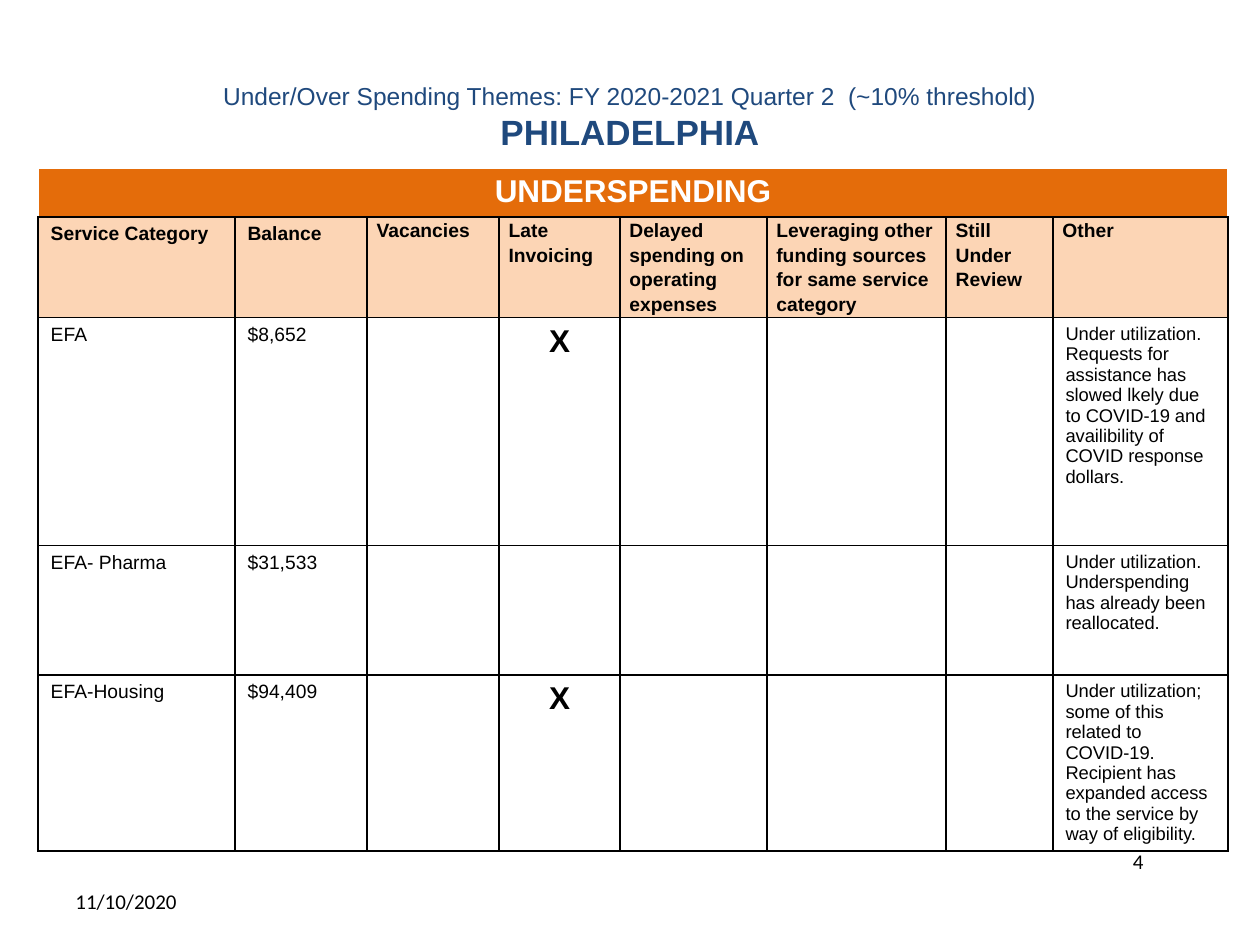
from lxml import etree
from pptx import Presentation
from pptx.dml.color import RGBColor
from pptx.enum.text import MSO_ANCHOR, PP_ALIGN
from pptx.oxml.ns import qn
from pptx.util import Pt

LEFT, CENTER, RIGHT = PP_ALIGN.LEFT, PP_ALIGN.CENTER, PP_ALIGN.RIGHT
MIDDLE = MSO_ANCHOR.MIDDLE

THEME = {
    "navy": "1F497D", "orange": "E46C0A", "peach": "FCD5B5",
    "black": "000000", "white": "FFFFFF",
    "font": "Arial", "footer_font": "Calibri",
    "subtitle": 14, "city": 20, "banner": 18, "mark": 18,
    "body": 11, "reason": 10.5, "footer": 12,
}


def add_run(paragraph, text, size, color="black", bold=False, font="font"):
    run = paragraph.add_run()
    run.text = text
    run.font.name = THEME[font]
    run.font.size = Pt(THEME[size])
    run.font.bold = bold
    run.font.color.rgb = RGBColor.from_string(THEME[color])


def style_cell(cell, fill, edge="black"):
    """Fill a cell and draw its borders; edge colours all sides but the bottom."""
    if fill:
        cell.fill.solid()
        cell.fill.fore_color.rgb = RGBColor.from_string(THEME[fill])
    else:
        cell.fill.background()
    properties = cell._tc.get_or_add_tcPr()
    for index, side in enumerate(("lnL", "lnR", "lnT", "lnB")):
        line = etree.Element(qn("a:" + side), w=str(Pt(1)))
        solid = etree.SubElement(line, qn("a:solidFill"))
        color = "black" if side == "lnB" else edge
        etree.SubElement(solid, qn("a:srgbClr"), val=THEME[color])
        properties.insert(index, line)


prs = Presentation()
prs.slide_width, prs.slide_height = Pt(720), Pt(540)
slide = prs.slides.add_slide(prs.slide_layouts[5])

# Title
title = slide.shapes.title
title.left, title.top, title.width, title.height = Pt(36), Pt(21.6), Pt(648), Pt(90)
title.text_frame.vertical_anchor = MIDDLE
heading = title.text_frame.paragraphs[0]
heading.alignment = CENTER
add_run(heading, "Under/Over Spending Themes: FY 2020-2021 Quarter 2  (~10% threshold)",
        "subtitle", "navy")
heading.add_line_break()
add_run(heading, "PHILADELPHIA", "city", "navy", bold=True)

# Spending table
column_widths = [112.5, 75.5, 75.5, 69, 84, 102.5, 61, 100]
row_heights = [28, 57.5, 130.3, 74, 92]
headers = ["Service Category", "Balance", "Vacancies", "Late Invoicing",
           "Delayed spending on operating expenses",
           "Leveraging other funding sources for same service category",
           "Still Under Review", "Other"]
services = [
    ("EFA", "$8,652", True,
     "Under utilization. Requests for assistance has slowed lkely due to COVID-19 "
     "and availibility of COVID response dollars."),
    ("EFA- Pharma", "$31,533", False,
     "Under utilization. Underspending has already been reallocated."),
    ("EFA-Housing", "$94,409", True,
     "Under utilization; some of this related to COVID-19. Recipient has expanded "
     "access to the service by way of eligibility."),
]
LATE_INVOICING, OTHER = 3, 7

table = slide.shapes.add_table(
    len(row_heights), len(column_widths), Pt(21.8), Pt(96),
    Pt(sum(column_widths)), Pt(sum(row_heights))).table
for column, width in zip(table.columns, column_widths):
    column.width = Pt(width)
for row, height in zip(table.rows, row_heights):
    row.height = Pt(height)

# Banner row
for cell in table.rows[0].cells:
    style_cell(cell, "orange", edge="white")
banner = table.cell(0, 0)
banner.merge(table.cell(0, OTHER))
banner_text = banner.text_frame.paragraphs[0]
banner_text.alignment = CENTER
add_run(banner_text, "UNDERSPENDING", "banner", "white", bold=True)

# Header row
for index, header in enumerate(headers):
    cell = table.cell(1, index)
    style_cell(cell, "peach")
    paragraph = cell.text_frame.paragraphs[0]
    if index > 1:
        cell.margin_left = cell.margin_right = Pt(5.4)
        cell.margin_top = cell.margin_bottom = Pt(0)
        paragraph.line_spacing = 1.15
    add_run(paragraph, header, "body", bold=True)

# Service rows
for row_index, (service, balance, late, reason) in enumerate(services, start=2):
    cells = list(table.rows[row_index].cells)
    for cell in cells:
        style_cell(cell, None)
    add_run(cells[0].text_frame.paragraphs[0], service, "body")
    add_run(cells[1].text_frame.paragraphs[0], balance, "body")
    if late:
        mark = cells[LATE_INVOICING].text_frame.paragraphs[0]
        mark.alignment = CENTER
        add_run(mark, "X", "mark", bold=True)
    add_run(cells[OTHER].text_frame.paragraphs[0], reason, "reason")

# Date and page number
for text, left, top, alignment in (("11/10/2020", 36, 500.4, LEFT),
                                   ("4", 492.5, 477.4, RIGHT)):
    footer = slide.shapes.add_textbox(Pt(left), Pt(top), Pt(168), Pt(28.8)).text_frame
    footer.word_wrap = True
    footer.vertical_anchor = MIDDLE
    footer.paragraphs[0].alignment = alignment
    add_run(footer.paragraphs[0], text, "footer", font="footer_font")

prs.save("out.pptx")
